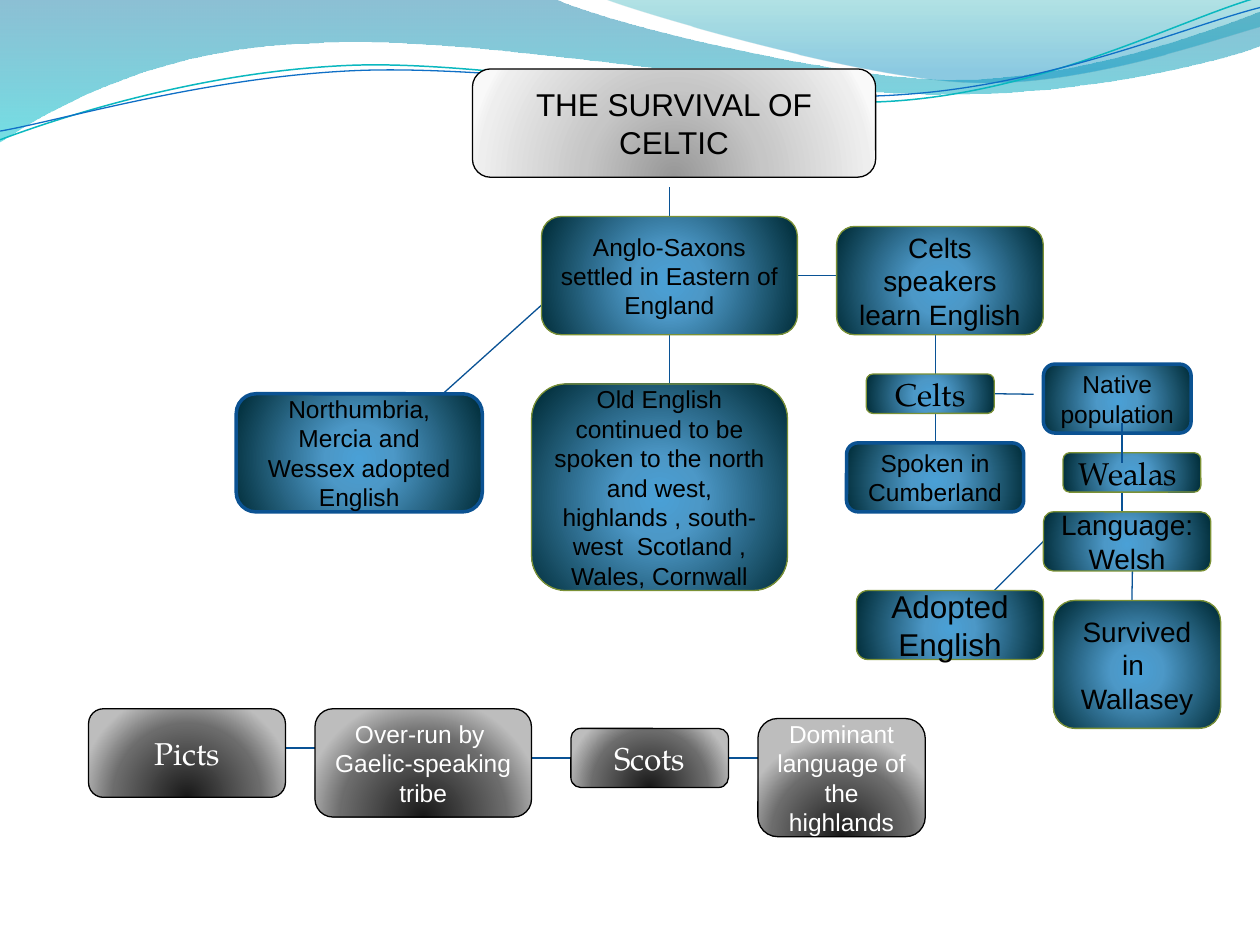
from lxml.etree import SubElement
from pptx import Presentation
from pptx.dml.color import RGBColor
from pptx.enum.shapes import MSO_CONNECTOR as Connector, MSO_SHAPE as Shape
from pptx.enum.text import MSO_ANCHOR as Anchor, PP_ALIGN as Align
from pptx.oxml import parse_xml
from pptx.oxml.ns import nsdecls, qn
from pptx.util import Pt

COLORS = {
    "black": "000000", "white": "FFFFFF", "link": "095295", "frame": "0B5292",
    "olive": "7B9135", "teal": "0AB8BF", "blue": "0F6FC6",
}
SANS, SERIF = "Arial", "TeX Gyre Pagella"

# Gradients: stops (position, colour, opacity), then the focus (l, t, r, b) or None for vertical
GRADIENTS = {
    "silver": ([(0, "979797", 100), (43, "C6C6C6", 100), (93, "EEEEEE", 100),
                (100, "F9F9F9", 100)], (50, 130, 50, -30)),
    "charcoal": ([(0, "191919", 100), (68, "6C6C6C", 100), (100, "BDBDBD", 100)],
                 (50, 130, 50, -30)),
    "ocean": ([(0, "4AA0D6", 100), (25, "4C98C7", 100), (100, "002C38", 100)],
              (10, 110, 10, 100)),
    "left wave": ([(0, "0074A1", 45), (100, "00C6CF", 55)], None),
    "right wave": ([(0, "00A1A9", 30), (80, "008BBF", 45)], None),
}

# Box styles: gradient, line colour, line width, text colour
STYLES = {
    "title": ("silver", "black", 0.75, "black"),
    "celtic": ("ocean", "olive", 0.75, "black"),
    "framed": ("ocean", "frame", 2, "black"),
    "north": ("charcoal", "black", 0.75, "white"),
}

BOXES = [
    ("THE SURVIVAL OF CELTIC", (270, 39.4, 230.4, 61.9), "title", 18, SANS),
    ("Anglo-Saxons settled in Eastern of England", (309.4, 123.75, 146.25, 67.5),
     "celtic", 14, SANS),
    ("Celts speakers learn English", (478.1, 129.4, 118.1, 61.9), "celtic", 16, SANS),
    ("Celts", (495, 213.75, 73.1, 22.5), "celtic", 18, SERIF),
    ("Wealas ", (607.5, 258.75, 78.75, 22.5), "celtic", 18, SERIF),
    ("Language: Welsh", (596.25, 292.5, 95.6, 33.75), "celtic", 16, SANS),
    ("Old English continued to be spoken to the north and west, highlands , "
     "south-west  Scotland , Wales, Cornwall", (303.75, 219.4, 146.25, 118.1),
     "celtic", 14, SANS),
    ("Picts", (50.6, 405, 112.5, 50.6), "north", 18, SERIF),
    ("Over-run by  Gaelic-speaking tribe", (180, 405, 123.75, 61.9), "north", 14, SANS),
    ("Scots", (326.25, 416.25, 90, 33.75), "north", 18, SERIF),
    ("Dominant language of the highlands", (433.1, 410.6, 95.6, 67.5), "north", 14, SANS),
    ("Adopted English", (489.4, 337.5, 106.9, 39.4), "celtic", 18, SANS),
    ("Survived in  Wallasey", (601.9, 343.1, 95.6, 73.1), "celtic", 16, SANS),
    ("Native population", (596.25, 208.1, 84.4, 39.4), "framed", 14, SANS),
    ("Spoken in Cumberland", (483.75, 253.1, 101.25, 39.4), "framed", 14, SANS),
    ("Northumbria, Mercia and Wessex adopted English", (135, 225, 140.6, 67.5),
     "framed", 14, SANS),
]

# Links as x1, y1, x2, y2
LINKS_BEHIND = [
    (382.5, 106.9, 382.5, 129.4), (455.6, 157.5, 483.75, 157.5), (534.4, 191.25, 534.4, 213.75),
    (568.1, 225, 590.6, 225.3), (641.25, 281.25, 641.25, 292.5), (647.1, 326.25, 646.7, 348.75),
    (382.5, 191.25, 382.5, 219.4), (163.1, 427.5, 185.6, 427.5), (303.75, 433.1, 326.25, 433.1),
    (416.25, 433.1, 444.4, 433.1), (596.25, 309.4, 568.1, 337.5),
    (534.4, 236.25, 534.4, 258.75), (309.4, 174.4, 253.1, 225),
]
LINKS_IN_FRONT = [(641.25, 241.9, 641.25, 264.4)]

# Waves: start, then line ends (2 numbers) or curves (6 numbers); gradient; line colour and width
WAVES = [
    ([(0, 0), (316.8, -0.7), (342.7, 12.2, 478.1, 45.4, 545.8, 45.4),
      (614.2, 45.4, 689.8, 18.7, 720, 6.5), (720.7, 25.9),
      (707.8, 31.7, 626.4, 54.7, 537.1, 54), (447.8, 54, 275, 20.2, 185, 24.5),
      (92.9, 25.9, 33.1, 59.8, -0.7, 81.4), (0, 0)], "left wave", None),
    ([(344.9, -0.7), (366.5, 7.9, 491, 44.6, 553.7, 46.8),
      (616.3, 49.7, 691.9, 23, 720, 15.1), (720, 0), (344.9, -0.7)], "right wave", None),
    ([(0, 79.9), (34.6, 67, 113.8, 41, 199.4, 37.4), (284.4, 33.8, 427, 64.1, 513.4, 57.6),
      (599.8, 51.1, 675.4, 10.8, 718.6, -1.4)], None, ("teal", 0.85)),
    ([(0, 74.9), (33.8, 69.1, 118.1, 43.9, 203.8, 40.3), (290.2, 36.7, 429.8, 60.5, 516.2, 54),
      (601.9, 48.2, 677.5, 15.1, 720, 4.3)], None, ("blue", 0.75)),
]


def rgb(name):
    return RGBColor.from_string(COLORS[name])


def set_line(line, color, width):
    line.color.rgb = rgb(color)
    line.width = Pt(width)


def set_gradient(shape, name):
    stops, focus = GRADIENTS[name]
    stop_xml = "".join(
        f'<a:gs pos="{pos * 1000}"><a:srgbClr val="{color}">'
        f'<a:alpha val="{opacity * 1000}"/></a:srgbClr></a:gs>' for pos, color, opacity in stops)
    if focus:
        sides = " ".join(f'{side}="{value * 1000}"' for side, value in zip("ltrb", focus))
        direction = f'<a:path path="circle"><a:fillToRect {sides}/></a:path>'
    else:
        direction = '<a:lin ang="5400000" scaled="0"/>'
    fill = parse_xml(f'<a:gradFill {nsdecls("a")} rotWithShape="1"><a:gsLst>{stop_xml}</a:gsLst>'
                     f'{direction}</a:gradFill>')
    geometry = [child for child in shape._element.spPr if child.tag.endswith("Geom")][0]
    geometry.addnext(fill)


def add_wave(shapes, segments, gradient, line):
    # Lay every anchor and control point as a line end, then join triples into curves
    points = [(Pt(x), Pt(y)) for segment in segments
              for x, y in zip(segment[::2], segment[1::2])]
    builder = shapes.build_freeform(*points[0])
    builder.add_line_segments(points[1:], close=gradient is not None)
    wave = builder.convert_to_shape()
    line_ends = iter(list(wave._element.iter(qn("a:lnTo"))))
    for segment in segments[1:]:
        first = next(line_ends)
        if len(segment) == 6:
            first.tag = qn("a:cubicBezTo")
            for control in (next(line_ends), next(line_ends)):
                first.append(control[0])
                control.getparent().remove(control)

    wave.shadow.inherit = False
    if gradient:
        set_gradient(wave, gradient)
        wave.line.fill.background()
    else:
        wave.fill.background()
        set_line(wave.line, *line)


def add_box(shapes, text, place, style, size, font):
    gradient, line_color, line_width, text_color = STYLES[style]
    box = shapes.add_shape(Shape.ROUNDED_RECTANGLE, *map(Pt, place))
    set_gradient(box, gradient)
    set_line(box.line, line_color, line_width)
    box.shadow.inherit = False
    frame = box.text_frame
    frame.word_wrap = True
    frame.vertical_anchor = Anchor.MIDDLE
    para = frame.paragraphs[0]
    para.text = text
    para.alignment = Align.CENTER
    para.font.size, para.font.name = Pt(size), font
    para.font.color.rgb = rgb(text_color)


def add_links(shapes, links):
    for ends in links:
        link = shapes.add_connector(Connector.STRAIGHT, *map(Pt, ends))
        set_line(link.line, "link", 0.75)
        SubElement(link._element.spPr, qn("a:effectLst"))


def main():
    deck = Presentation()
    deck.slide_width, deck.slide_height = Pt(720), Pt(540)
    page = deck.slides.add_slide(deck.slide_layouts[6])
    shapes = page.shapes

    # Wave banner
    for wave in WAVES:
        add_wave(shapes, *wave)

    # Diagram, headed by its title box
    add_links(shapes, LINKS_BEHIND)
    for box in BOXES:
        add_box(shapes, *box)
    add_links(shapes, LINKS_IN_FRONT)

    deck.save("out.pptx")


if __name__ == "__main__":
    main()
